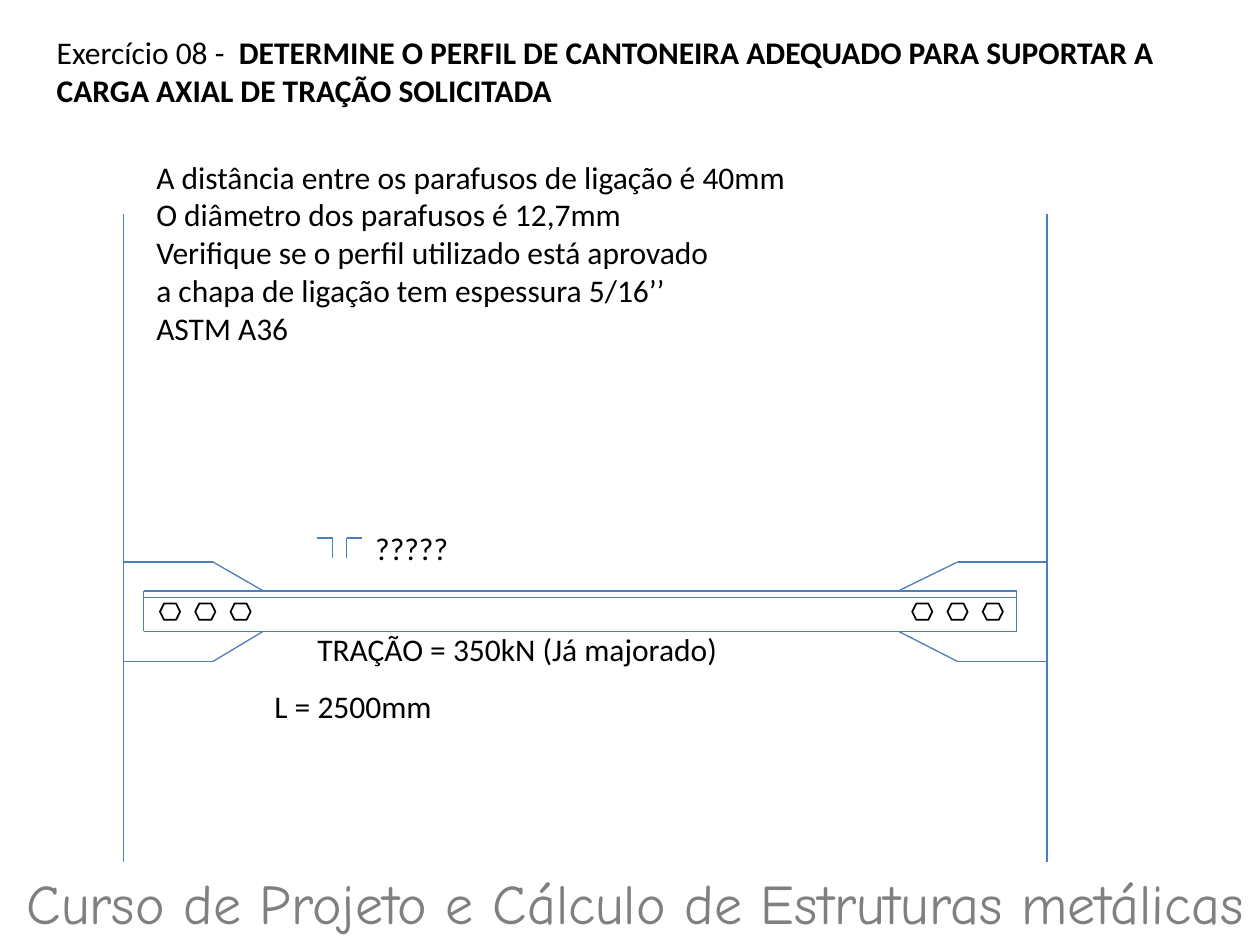
from lxml import etree
from pptx import Presentation
from pptx.dml.color import RGBColor
from pptx.enum.shapes import MSO_CONNECTOR, MSO_SHAPE
from pptx.enum.text import MSO_ANCHOR, MSO_AUTO_SIZE, PP_ALIGN
from pptx.oxml.ns import qn
from pptx.util import Inches, Pt

STRAIGHT = MSO_CONNECTOR.STRAIGHT
HEXAGON = MSO_SHAPE.HEXAGON
LEFT, CENTER = PP_ALIGN.LEFT, PP_ALIGN.CENTER
TOP = MSO_ANCHOR.TOP
NO_AUTOFIT = MSO_AUTO_SIZE.NONE

BLACK = RGBColor(0x00, 0x00, 0x00)
GRAY = RGBColor(0x80, 0x80, 0x80)
BLUE = RGBColor(0x4B, 0x7E, 0xBC)

# Content: each paragraph is a list of (text, bold) runs
TITLE = [[
    ("Exercício 08 -  ", False),
    ("DETERMINE O PERFIL DE CANTONEIRA ADEQUADO PARA SUPORTAR A "
     "CARGA AXIAL DE TRAÇÃO SOLICITADA", True),
]]
CONDITIONS = [[(text, False)] for text in (
    "A distância entre os parafusos de ligação é 40mm",
    "O diâmetro dos parafusos é 12,7mm",
    "Verifique se o perfil utilizado está aprovado",
    "a chapa de ligação tem espessura 5/16’’",
    "ASTM A36",
)]
COURSE = [[("Curso de Projeto e Cálculo de Estruturas metálicas ", False)]]
LABELS = [  # text, left, top
    ("?????", 2.88, 4.15),
    ("L = 2500mm", 2.08, 5.4),
    ("TRAÇÃO = 350kN (Já majorado)", 2.42, 4.95),
]

# Geometry of the bar, in inches
BAR_LEFT, BAR_RIGHT = 1.14, 8.07
BAR_TOP, BAR_FLANGE, BAR_BOTTOM = 4.69, 4.74, 5.01
COLUMN_TOP, COLUMN_BOTTOM = 1.7, 6.84
PLATE_TOP, PLATE_BOTTOM = 4.46, 5.25
PLATES = [(0.98, 1.69, 2.09), (8.31, 7.6, 7.13)]  # column, corner, bar end
BOLT_STARTS, BOLT_COUNT, BOLT_PITCH = (1.27, 7.24), 3, 0.28
BOLT_TOP, BOLT_WIDTH, BOLT_HEIGHT = 4.79, 0.16, 0.13
ANGLES = [(2.64, 2.52), (2.75, 2.87)]  # heel, toe
ANGLE_TOP, ANGLE_BOTTOM = 4.27, 4.43

presentation = Presentation()
presentation.slide_width, presentation.slide_height = Inches(10), Inches(7.5)
slide = presentation.slides.add_slide(presentation.slide_layouts[1])


def write(shape, box, paragraphs, size=18, font="Calibri", color=BLACK,
          alignment=LEFT):
    shape.left, shape.top, shape.width, shape.height = map(Inches, box)
    frame = shape.text_frame
    frame.word_wrap = True
    frame.auto_size = NO_AUTOFIT
    frame.vertical_anchor = TOP
    for index, runs in enumerate(paragraphs):
        paragraph = frame.add_paragraph() if index else frame.paragraphs[0]
        paragraph.alignment = alignment
        paragraph.space_before = Pt(0)
        for text, bold in runs:
            run = paragraph.add_run()
            run.text = text
            run.font.name = font
            run.font.size = Pt(size)
            run.font.bold = bold
            run.font.color.rgb = color


def add_text(box, paragraphs, **style):
    write(slide.shapes.add_textbox(0, 0, 0, 0), box, paragraphs, **style)


def add_line(x1, y1, x2, y2):
    line = slide.shapes.add_connector(
        STRAIGHT, Inches(x1), Inches(y1), Inches(x2), Inches(y2))
    line.line.color.rgb = BLUE
    line.line.width = Pt(0.75)
    etree.SubElement(line._element.spPr, qn("a:effectLst"))


def add_bolt(left):
    bolt = slide.shapes.add_shape(
        HEXAGON, Inches(left), Inches(BOLT_TOP),
        Inches(BOLT_WIDTH), Inches(BOLT_HEIGHT))
    bolt.shadow.inherit = False
    bolt.fill.background()
    bolt.line.color.rgb = BLACK
    bolt.line.width = Pt(1)


# Title, conditions without bullets, and course name
write(slide.shapes.title, (0.35, 0.21, 9.65, 0.71), TITLE)
body = slide.placeholders[1]
write(body, (1.14, 1.2, 8.23, 1.62), CONDITIONS)
for paragraph in body.text_frame.paragraphs:
    properties = paragraph._p.get_or_add_pPr()
    properties.set("marL", "0")
    properties.set("indent", "0")
    etree.SubElement(properties, qn("a:buNone"))
add_text((-0.43, 6.84, 11.1, 0.64), COURSE, size=32, font="Comic Neue",
         color=GRAY, alignment=CENTER)

# Tension bar
for y in (BAR_TOP, BAR_FLANGE, BAR_BOTTOM):
    add_line(BAR_LEFT, y, BAR_RIGHT, y)
for x in (BAR_LEFT, BAR_RIGHT):
    add_line(x, BAR_TOP, x, BAR_BOTTOM)

# Columns and gusset plates
for column, corner, bar_end in PLATES:
    add_line(column, COLUMN_TOP, column, COLUMN_BOTTOM)
    for plate_y, bar_y in ((PLATE_TOP, BAR_TOP), (PLATE_BOTTOM, BAR_BOTTOM)):
        add_line(column, plate_y, corner, plate_y)
        add_line(corner, plate_y, bar_end, bar_y)

# Bolts
for start in BOLT_STARTS:
    for index in range(BOLT_COUNT):
        add_bolt(start + index * BOLT_PITCH)

# Double-angle section symbol
for heel, toe in ANGLES:
    add_line(heel, ANGLE_TOP, heel, ANGLE_BOTTOM)
    add_line(heel, ANGLE_TOP, toe, ANGLE_TOP)

# Labels
for text, left, top in LABELS:
    add_text((left, top, 8.23, 0.4), [[(text, False)]])

presentation.save("out.pptx")
